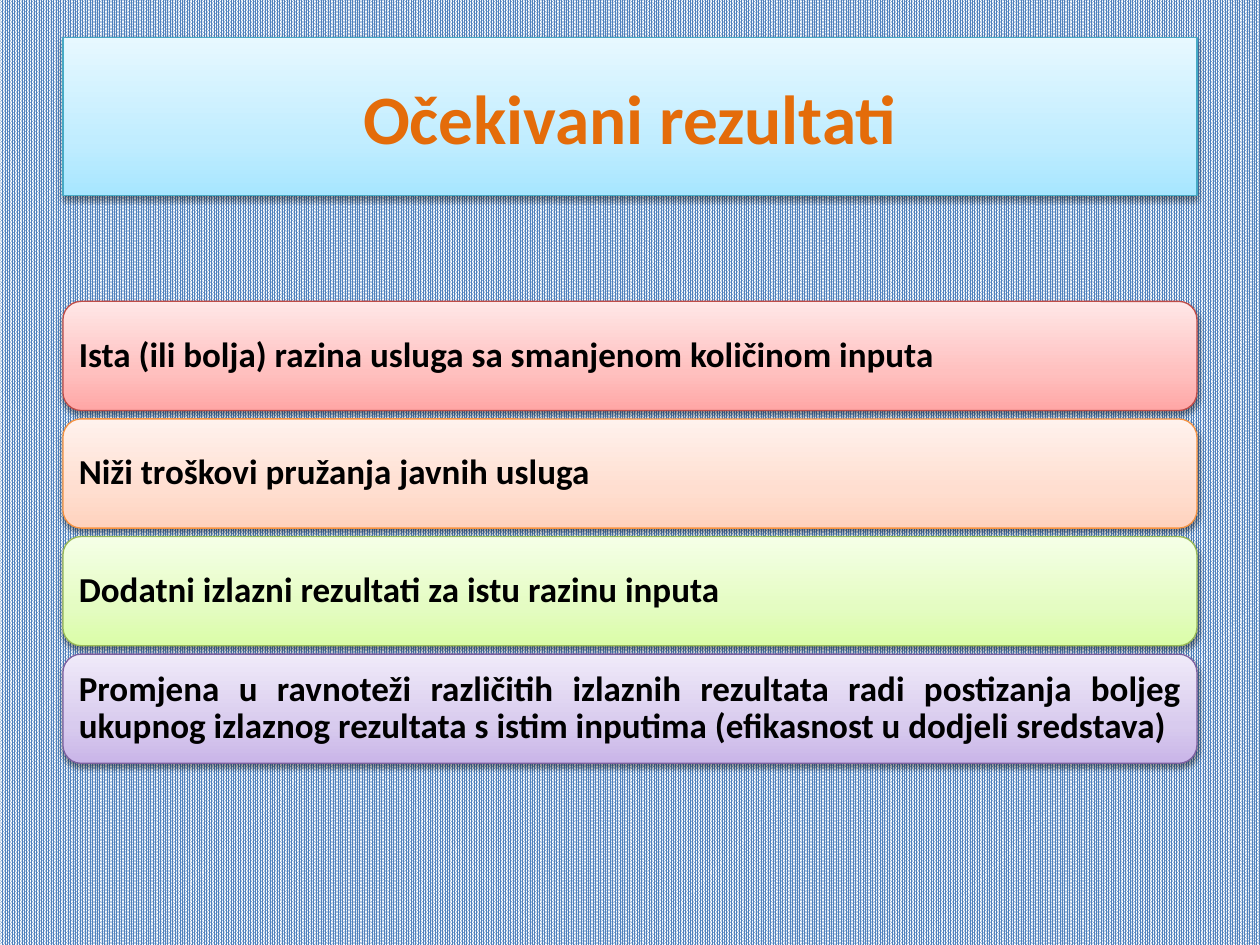
from copy import deepcopy

from lxml import etree
from pptx import Presentation
from pptx import util as u
from pptx.dml.color import RGBColor
from pptx.enum import dml, shapes, text
from pptx.oxml.ns import qn

BLACK = RGBColor(0x00, 0x00, 0x00)
WHITE = RGBColor(0xFF, 0xFF, 0xFF)
BLUE = RGBColor(0x4F, 0x81, 0xBD)
ORANGE = RGBColor(0xE4, 0x6C, 0x0A)
AQUA = (RGBColor(0xA7, 0xE6, 0xFF), RGBColor(0xC1, 0xED, 0xFF),
        RGBColor(0xE7, 0xF8, 0xFF), RGBColor(0x46, 0xAA, 0xC5))
RED = (RGBColor(0xFF, 0xA6, 0xA5), RGBColor(0xFF, 0xC0, 0xBF),
       RGBColor(0xFF, 0xE7, 0xE7), RGBColor(0xBF, 0x4C, 0x48))
PEACH = (RGBColor(0xFF, 0xD2, 0xBD), RGBColor(0xFF, 0xDE, 0xD0),
         RGBColor(0xFF, 0xF2, 0xED), RGBColor(0xF6, 0x92, 0x40))
GREEN = (RGBColor(0xDA, 0xFD, 0xA7), RGBColor(0xE4, 0xFC, 0xC2),
         RGBColor(0xF5, 0xFF, 0xE7), RGBColor(0x98, 0xB9, 0x55))
PURPLE = (RGBColor(0xC9, 0xB5, 0xE8), RGBColor(0xD8, 0xCB, 0xEE),
          RGBColor(0xF0, 0xEA, 0xF9), RGBColor(0x7D, 0x60, 0xA0))

LEFT, WIDTH = 36, 648
TOP, HEIGHT, STEP = 172.2, 62.4, 67.2
ITEMS = [
    ("Ista (ili bolja) razina usluga sa smanjenom količinom inputa", RED),
    ("Niži troškovi pružanja javnih usluga", PEACH),
    ("Dodatni izlazni rezultati za istu razinu inputa", GREEN),
    ("Promjena u ravnoteži različitih izlaznih rezultata radi postizanja "
     "boljeg ukupnog izlaznog rezultata s istim inputima "
     "(efikasnost u dodjeli sredstava)", PURPLE),
]


def shade(shape, tones):
    fill = shape.fill
    fill.gradient()
    fill.gradient_angle = 90
    stops = shape._element.spPr.find(qn("a:gradFill")).find(qn("a:gsLst"))
    stops.insert(1, deepcopy(stops[0]))
    for stop, tone, place in zip(fill.gradient_stops, tones, (0, 0.35, 1)):
        stop.color.rgb = tone
        stop.position = place


def shadow(shape):
    shape.shadow.inherit = False
    effects = shape._element.spPr.find(qn("a:effectLst"))
    outer = etree.SubElement(
        effects, qn("a:outerShdw"), blurRad=str(u.Pt(3.1)),
        dist=str(u.Pt(1.6)), dir="5400000", rotWithShape="0")
    color = etree.SubElement(outer, qn("a:srgbClr"), val=str(BLACK))
    etree.SubElement(color, qn("a:alpha"), val="38000")


def write(shape, words, size=20, color=BLACK, align=text.PP_ALIGN.JUSTIFY,
          inset=6, space=0.9):
    frame = shape.text_frame
    frame.word_wrap = True
    frame.vertical_anchor = text.MSO_ANCHOR.MIDDLE
    frame.margin_left = frame.margin_right = u.Pt(inset)
    frame.margin_top = frame.margin_bottom = u.Pt(inset)
    para = frame.paragraphs[0]
    para.alignment = align
    para.line_spacing = space
    run = para.add_run()
    run.text = words
    font = run.font
    font.name, font.size, font.bold = "Calibri", u.Pt(size), True
    font.color.rgb = color


def panel(slide, kind, top, height, tones):
    shape = slide.shapes.add_shape(
        kind, u.Pt(LEFT), u.Pt(top), u.Pt(WIDTH), u.Pt(height))
    shade(shape, tones[:3])
    shape.line.color.rgb = tones[3]
    shape.line.width = u.Pt(0.75)
    shadow(shape)
    return shape


def ground(slide):
    fill = slide.background.fill
    fill.patterned()
    fill.pattern = dml.MSO_PATTERN.PERCENT_90
    fill.fore_color.rgb = BLUE
    fill.back_color.rgb = WHITE


def main():
    deck = Presentation()
    deck.slide_width, deck.slide_height = u.Pt(720), u.Pt(540)
    slide = deck.slides.add_slide(deck.slide_layouts[6])
    ground(slide)
    title = panel(slide, shapes.MSO_SHAPE.RECTANGLE, 21.6, 90, AQUA)
    write(title, "Očekivani rezultati", size=39.6, color=ORANGE,
          align=text.PP_ALIGN.CENTER, space=1)
    for row, (words, tones) in enumerate(ITEMS):
        box = panel(slide, shapes.MSO_SHAPE.ROUNDED_RECTANGLE,
                    TOP + row * STEP, HEIGHT, tones)
        write(box, words)
    deck.save("out.pptx")


if __name__ == "__main__":
    main()
